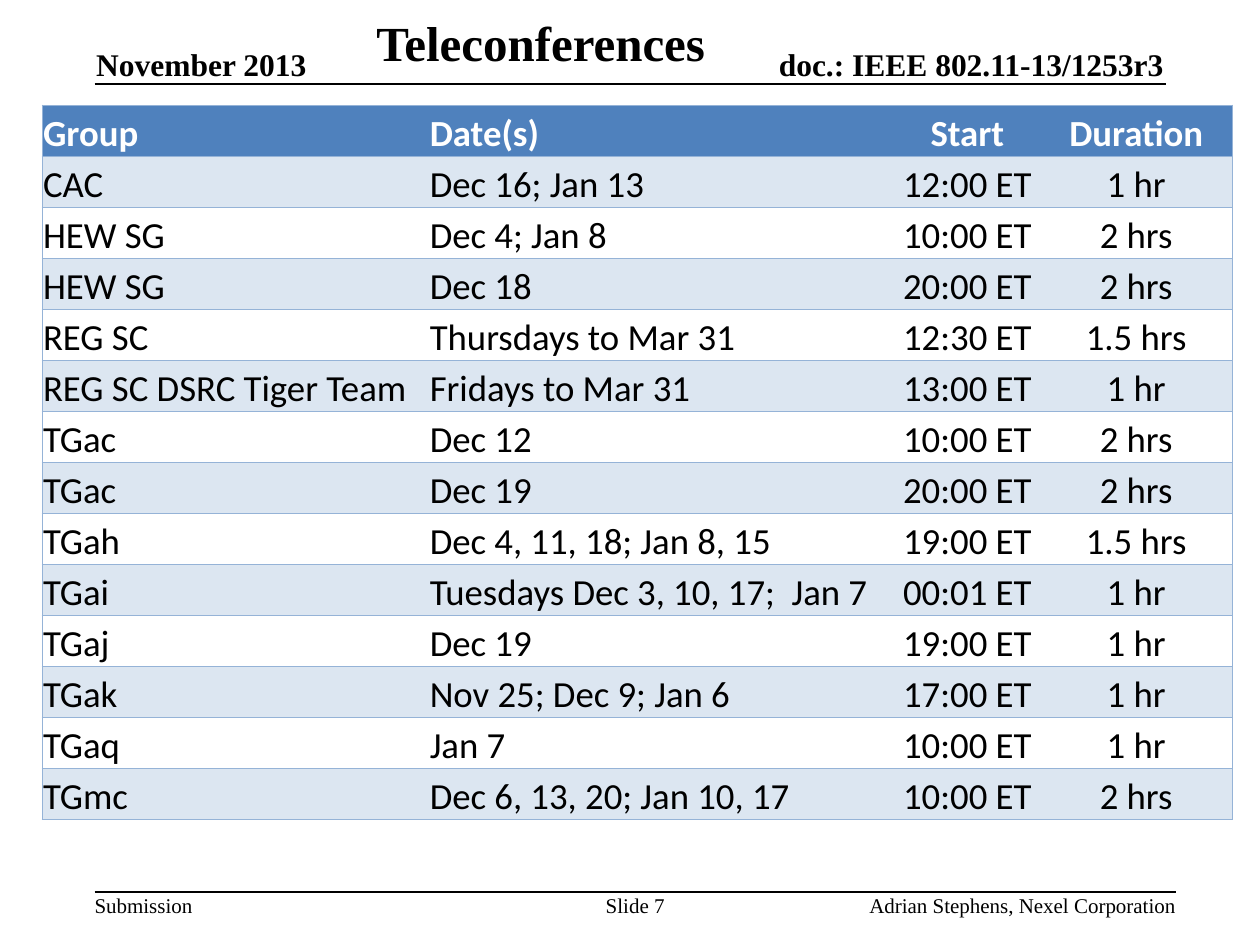
from lxml.etree import SubElement
from pptx import Presentation
from pptx.dml.color import RGBColor
from pptx.enum.shapes import MSO_CONNECTOR
from pptx.enum.text import MSO_ANCHOR, PP_ALIGN
from pptx.oxml.ns import qn
from pptx.util import Pt

COLORS = {
    "text": "000000",
    "header_text": "FFFFFF",
    "header_fill": "4F81BD",
    "band_fill": "DCE6F1",
    "border": "95B3D7",
}
SERIF, SANS = "Times New Roman", "Calibri"
LEFT, CENTER, RIGHT = PP_ALIGN.LEFT, PP_ALIGN.CENTER, PP_ALIGN.RIGHT

COLUMN_WIDTHS = [221, 266.4, 82.8, 110.2]
COLUMN_ALIGNS = [LEFT, LEFT, CENTER, CENTER]
SCHEDULE = [
    ("Group", "Date(s)", "Start", "Duration"),
    ("CAC", "Dec 16; Jan 13", "12:00 ET", "1 hr"),
    ("HEW SG", "Dec 4; Jan 8", "10:00 ET", "2 hrs"),
    ("HEW SG", "Dec 18", "20:00 ET", "2 hrs"),
    ("REG SC", "Thursdays to Mar 31", "12:30 ET", "1.5 hrs"),
    ("REG SC DSRC Tiger Team", "Fridays to Mar 31", "13:00 ET", "1 hr"),
    ("TGac", "Dec 12", "10:00 ET", "2 hrs"),
    ("TGac", "Dec 19", "20:00 ET", "2 hrs"),
    ("TGah", "Dec 4, 11, 18; Jan 8, 15", "19:00 ET", "1.5 hrs"),
    ("TGai", "Tuesdays Dec 3, 10, 17;  Jan 7", "00:01 ET", "1 hr"),
    ("TGaj", "Dec 19", "19:00 ET", "1 hr"),
    ("TGak", "Nov 25; Dec 9; Jan 6", "17:00 ET", "1 hr"),
    ("TGaq", "Jan 7", "10:00 ET", "1 hr"),
    ("TGmc", "Dec 6, 13, 20; Jan 10, 17", "10:00 ET", "2 hrs"),
]


def style_paragraph(paragraph, font_name, size, color, align, bold=False):
    paragraph.alignment = align
    font = paragraph.runs[0].font
    font.name, font.size, font.bold = font_name, Pt(size), bold
    font.color.rgb = RGBColor.from_string(COLORS[color])


def add_label(slide, text, left, top, width, height, size, align,
              bold=False, anchor=MSO_ANCHOR.TOP):
    frame = slide.shapes.add_textbox(Pt(left), Pt(top), Pt(width), Pt(height)).text_frame
    frame.word_wrap = True
    frame.vertical_anchor = anchor
    frame.margin_left = frame.margin_right = frame.margin_top = frame.margin_bottom = 0
    frame.text = text
    style_paragraph(frame.paragraphs[0], SERIF, size, "text", align, bold)


def add_rule(slide, left, top, width):
    rule = slide.shapes.add_connector(
        MSO_CONNECTOR.STRAIGHT, Pt(left), Pt(top), Pt(left + width), Pt(top))
    rule.line.color.rgb = RGBColor.from_string(COLORS["text"])
    rule.line.width = Pt(1)
    SubElement(rule._element.spPr, qn("a:effectLst"))


def add_header(slide, left, top, width, height):
    date_width, number_width, label_height = 150, 258.5, 21.6
    label_top = top + height - label_height - 0.7
    add_label(slide, "doc.: IEEE 802.11-13/1253r3", left + width - number_width - 1,
              label_top, number_width, label_height, 18, RIGHT, True, MSO_ANCHOR.BOTTOM)
    add_rule(slide, left, top + height, width)
    add_label(slide, "November 2013", left + 1, label_top, date_width, label_height,
              18, LEFT, True, MSO_ANCHOR.BOTTOM)
    add_label(slide, "Teleconferences", left, top, 510, 24, 28, CENTER, True,
              MSO_ANCHOR.MIDDLE)


def add_footer(slide, left, top, width, height):
    add_rule(slide, left, top, width)
    add_label(slide, "Submission", left, top, 60, height, 12, LEFT)
    add_label(slide, "Slide 7", left + 288, top, 42, height, 12, CENTER)
    author_width = 180
    add_label(slide, "Adrian Stephens, Nexel Corporation", left + width - author_width,
              top, author_width, height, 12, RIGHT)


def set_borders(cell, drawn_sides):
    properties = cell._tc.get_or_add_tcPr()
    for side in "LRTB":
        line = SubElement(properties, qn(f"a:ln{side}"), w=str(Pt(0.5)))
        if side in drawn_sides:
            fill = SubElement(line, qn("a:solidFill"))
            SubElement(fill, qn("a:srgbClr"), val=COLORS["border"])
        else:
            SubElement(line, qn("a:noFill"))


def set_fill(cell, row_index):
    if row_index and row_index % 2 == 0:
        cell.fill.background()
        return
    cell.fill.solid()
    fill_name = "band_fill" if row_index else "header_fill"
    cell.fill.fore_color.rgb = RGBColor.from_string(COLORS[fill_name])


def add_schedule(slide, left, top, width, height):
    last_column = len(COLUMN_WIDTHS) - 1
    table = slide.shapes.add_table(len(SCHEDULE), len(COLUMN_WIDTHS), Pt(left), Pt(top),
                                   Pt(width), Pt(height)).table
    table.horz_banding = False
    for column, column_width in zip(table.columns, COLUMN_WIDTHS):
        column.width = Pt(column_width)
    for row_index, entries in enumerate(SCHEDULE):
        table.rows[row_index].height = Pt(height / len(SCHEDULE))
        is_header = row_index == 0
        for column_index, entry in enumerate(entries):
            cell = table.cell(row_index, column_index)
            cell.margin_left = cell.margin_right = cell.margin_top = Pt(0.6)
            cell.margin_bottom = 0
            cell.vertical_anchor = MSO_ANCHOR.BOTTOM
            cell.text_frame.text = entry
            style_paragraph(cell.text_frame.paragraphs[0], SANS, 21,
                            "header_text" if is_header else "text",
                            COLUMN_ALIGNS[column_index], is_header)
            outer_side = {0: "L", last_column: "R"}.get(column_index, "")
            set_borders(cell, "TB" + outer_side)
            set_fill(cell, row_index)


def main():
    presentation = Presentation()
    presentation.slide_width, presentation.slide_height = Pt(720), Pt(540)
    slide = presentation.slides.add_slide(presentation.slide_layouts[6])
    add_header(slide, 54, 12, 612, 36)
    add_footer(slide, 54, 509.8, 618, 14.4)
    add_schedule(slide, 24, 60, sum(COLUMN_WIDTHS), 408)
    presentation.save("out.pptx")


if __name__ == "__main__":
    main()
